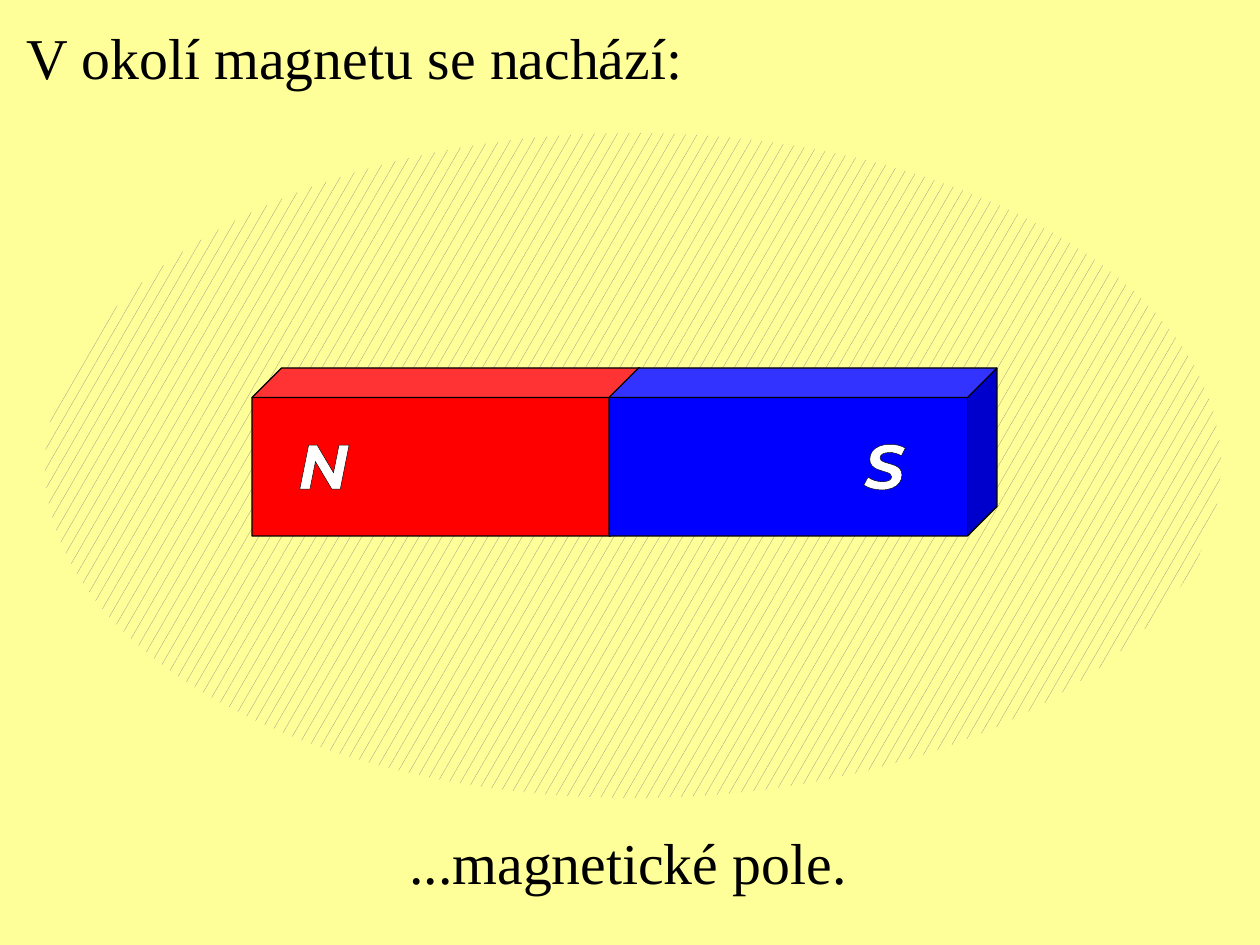
from dataclasses import dataclass

from lxml import etree
from pptx import Presentation
from pptx.dml.color import RGBColor
from pptx.enum.dml import MSO_PATTERN
from pptx.enum.shapes import MSO_SHAPE
from pptx.enum.text import MSO_AUTO_SIZE, PP_ALIGN
from pptx.oxml.ns import qn
from pptx.util import Pt

ELLIPSE, CUBE = MSO_SHAPE.OVAL, MSO_SHAPE.CUBE
CONFETTI = MSO_PATTERN.SMALL_CONFETTI
LEFT, CENTER = PP_ALIGN.LEFT, PP_ALIGN.CENTER
FIT_SHAPE, FIT_NONE = MSO_AUTO_SIZE.SHAPE_TO_FIT_TEXT, MSO_AUTO_SIZE.NONE
EMU_PER_PX = 914400 / 126


@dataclass(frozen=True)
class Theme:
    background: str = "FFFF99"
    hatch: str = "808080"
    ink: str = "000000"
    north: str = "FF0000"
    south: str = "0000FF"
    pole_text: str = "FFFFFF"
    body_font: str = "Times New Roman"
    pole_font: str = "Montserrat"
    body_size: int = 33
    pole_size: int = 36
    line: float = 0.75


THEME = Theme()


def px(*values):
    return [round(v * EMU_PER_PX) for v in values]


def rgb(color):
    return RGBColor.from_string(color)


def add_text(shapes, box, text, font, size, color, align=LEFT, fit=FIT_SHAPE):
    """Add a one-line text box and return its run."""
    tf = shapes.add_textbox(*px(*box)).text_frame
    tf.word_wrap = False
    tf.auto_size = fit
    p = tf.paragraphs[0]
    p.alignment = align
    r = p.add_run()
    r.text = text
    r.font.name = font
    r.font.size = Pt(size)
    r.font.color.rgb = rgb(color)
    return r


def add_caption(shapes, box, text):
    add_text(shapes, box, text, THEME.body_font, THEME.body_size, THEME.ink)


def add_field(shapes, box):
    """Add the hatched area around the magnet."""
    s = shapes.add_shape(ELLIPSE, *px(*box))
    s.shadow.inherit = False
    s.fill.patterned()
    s.fill.pattern = CONFETTI
    s.fill.fore_color.rgb = rgb(THEME.hatch)
    s.fill.back_color.rgb = rgb(THEME.background)
    s.line.fill.background()


def add_half(shapes, box, color):
    s = shapes.add_shape(CUBE, *px(*box))
    s.adjustments[0] = 0.176
    s.shadow.inherit = False
    s.fill.solid()
    s.fill.fore_color.rgb = rgb(color)
    s.line.color.rgb = rgb(THEME.ink)
    s.line.width = Pt(THEME.line)


def add_pole_letter(shapes, box, letter):
    r = add_text(shapes, box, letter, THEME.pole_font, THEME.pole_size,
                 THEME.pole_text, CENTER, FIT_NONE)
    r.font.bold = r.font.italic = True
    # Letter outline: a:ln comes first in the run properties
    ln = etree.Element(qn("a:ln"), w=str(Pt(THEME.line)))
    fill = etree.SubElement(ln, qn("a:solidFill"))
    etree.SubElement(fill, qn("a:srgbClr"), val=THEME.ink)
    r.font._element.insert(0, ln)


def add_magnet(shapes):
    group = shapes.add_group_shape().shapes
    for left, color in ((252, THEME.north), (609, THEME.south)):
        add_half(group, (left, 368, 388, 168), color)
    for left, letter in ((273, "N"), (834, "S")):
        add_pole_letter(group, (left, 420, 101, 89), letter)


def main():
    prs = Presentation()
    prs.slide_width, prs.slide_height = px(1260, 945)
    slide = prs.slides.add_slide(prs.slide_layouts[6])
    slide.background.fill.solid()
    slide.background.fill.fore_color.rgb = rgb(THEME.background)
    shapes = slide.shapes

    # Field, heading, magnet and answer, from back to front
    add_field(shapes, (45, 133, 1176, 665))
    add_caption(shapes, (14, 16, 697, 82), "V okolí magnetu se nachází:")
    add_magnet(shapes)
    add_caption(shapes, (397, 821, 478, 82), "...magnetické pole.")

    prs.save("out.pptx")


if __name__ == "__main__":
    main()
